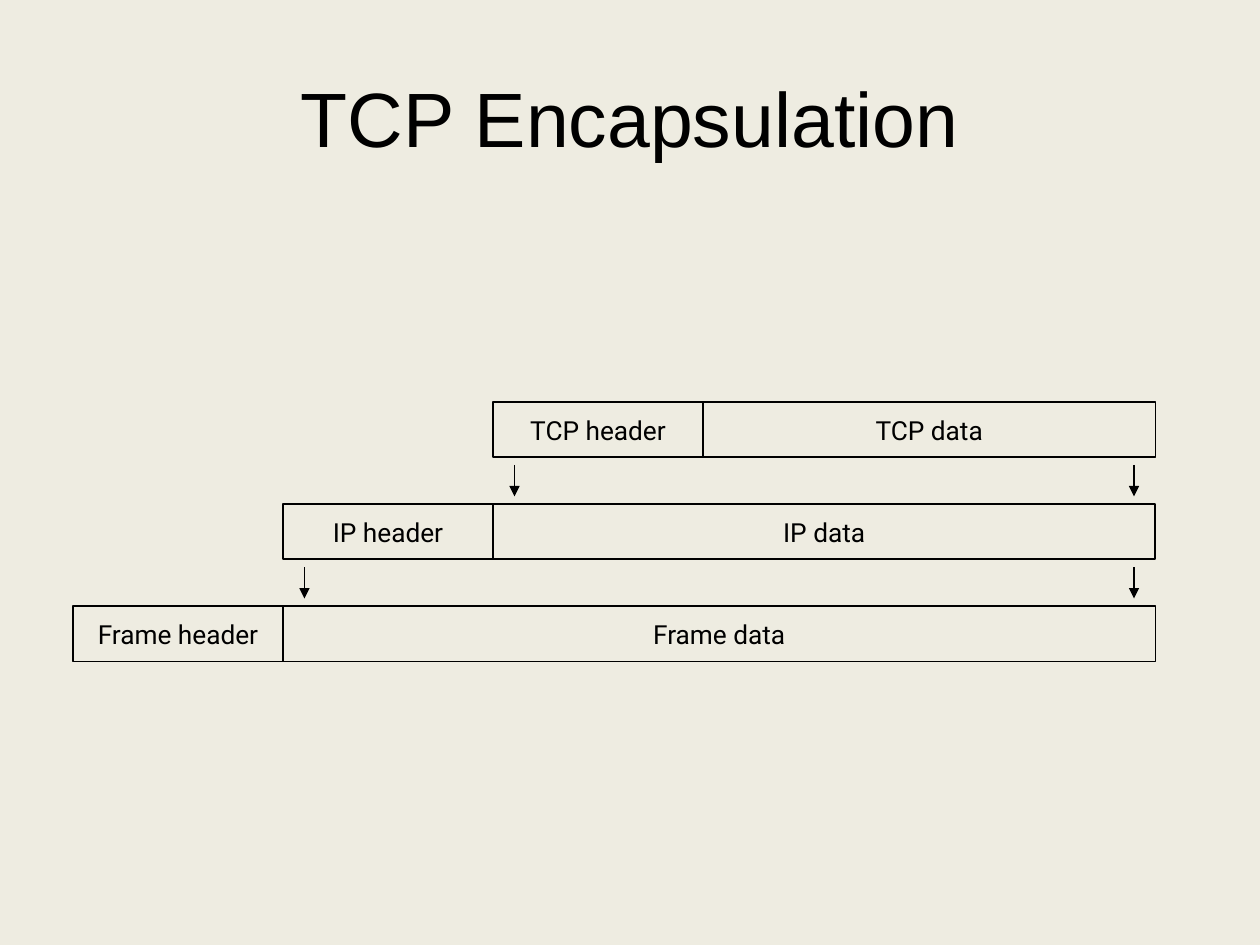
from dataclasses import dataclass

from lxml.etree import SubElement
from pptx import Presentation
from pptx.dml.color import RGBColor
from pptx.enum.shapes import MSO_CONNECTOR, MSO_SHAPE
from pptx.enum.text import MSO_ANCHOR, PP_ALIGN
from pptx.oxml.ns import qn
from pptx.util import Inches, Pt


@dataclass(frozen=True)
class Theme:
    background: RGBColor = RGBColor.from_string("EEECE1")
    ink: RGBColor = RGBColor.from_string("000000")
    title_font: str = "Arial"
    label_font: str = "Roboto"
    title_size: int = 44
    label_size: int = 15
    line_width: int = 1


THEME = Theme()
TITLE = "TCP Encapsulation"
LAYERS = ["TCP", "IP", "Frame"]  # innermost first

SLIDE_WIDTH, SLIDE_HEIGHT = 10, 7.5
HEADER_WIDTH = 5 / 3
LEFT, RIGHT = 0.58, 9.17
FIRST_ROW, ROW_PITCH, ROW_HEIGHT = 3.19, 0.81, 0.44
ARROW_INSET, ARROW_GAP, ARROW_LENGTH = 0.17, 0.06, 0.25
BOX_FRAME = {
    "margin_left": Inches(0.09), "margin_right": Inches(0.09),
    "margin_top": Inches(0.04), "margin_bottom": Inches(0.04),
    "word_wrap": False,
}


def write(shape, text, font_name, size):
    frame = shape.text_frame
    frame.vertical_anchor = MSO_ANCHOR.MIDDLE
    frame.text = text
    para = frame.paragraphs[0]
    para.alignment = PP_ALIGN.CENTER
    font = para.runs[0].font
    font.name, font.size = font_name, Pt(size)
    font.color.rgb = THEME.ink


def draw_line(line):
    line.color.rgb = THEME.ink
    line.width = Pt(THEME.line_width)


def add_field(page, text, left, right, top):
    box = page.shapes.add_shape(
        MSO_SHAPE.RECTANGLE, Inches(left), Inches(top),
        Inches(right - left), Inches(ROW_HEIGHT))
    box.shadow.inherit = False
    box.fill.background()
    draw_line(box.line)
    for name, value in BOX_FRAME.items():
        setattr(box.text_frame, name, value)
    write(box, text, THEME.label_font, THEME.label_size)


def add_down_arrow(page, x, top):
    arrow = page.shapes.add_connector(
        MSO_CONNECTOR.STRAIGHT, Inches(x), Inches(top),
        Inches(x), Inches(top + ARROW_LENGTH))
    draw_line(arrow.line)
    properties = arrow._element.spPr
    SubElement(properties.find(qn("a:ln")), qn("a:tailEnd"), type="triangle")
    SubElement(properties, qn("a:effectLst"))


def add_title(page):
    title = page.shapes.title
    title.left, title.top = Inches(0.5), Inches(0.3)
    title.width, title.height = Inches(9), Inches(1.25)
    write(title, TITLE, THEME.title_font, THEME.title_size)


def add_layers(page):
    """Each layer's data spans the whole layer above it."""
    last = len(LAYERS) - 1
    for row, layer in enumerate(LAYERS):
        left = LEFT + (last - row) * HEADER_WIDTH
        split = left + HEADER_WIDTH
        top = FIRST_ROW + row * ROW_PITCH
        add_field(page, f"{layer} header", left, split, top)
        add_field(page, f"{layer} data", split, RIGHT, top)
        if row < last:
            for x in (left + ARROW_INSET, RIGHT - ARROW_INSET):
                add_down_arrow(page, x, top + ROW_HEIGHT + ARROW_GAP)


def main():
    deck = Presentation()
    deck.slide_width, deck.slide_height = Inches(SLIDE_WIDTH), Inches(SLIDE_HEIGHT)
    page = deck.slides.add_slide(deck.slide_layouts[5])
    page.background.fill.solid()
    page.background.fill.fore_color.rgb = THEME.background
    add_title(page)
    add_layers(page)
    deck.save("out.pptx")


if __name__ == "__main__":
    main()
